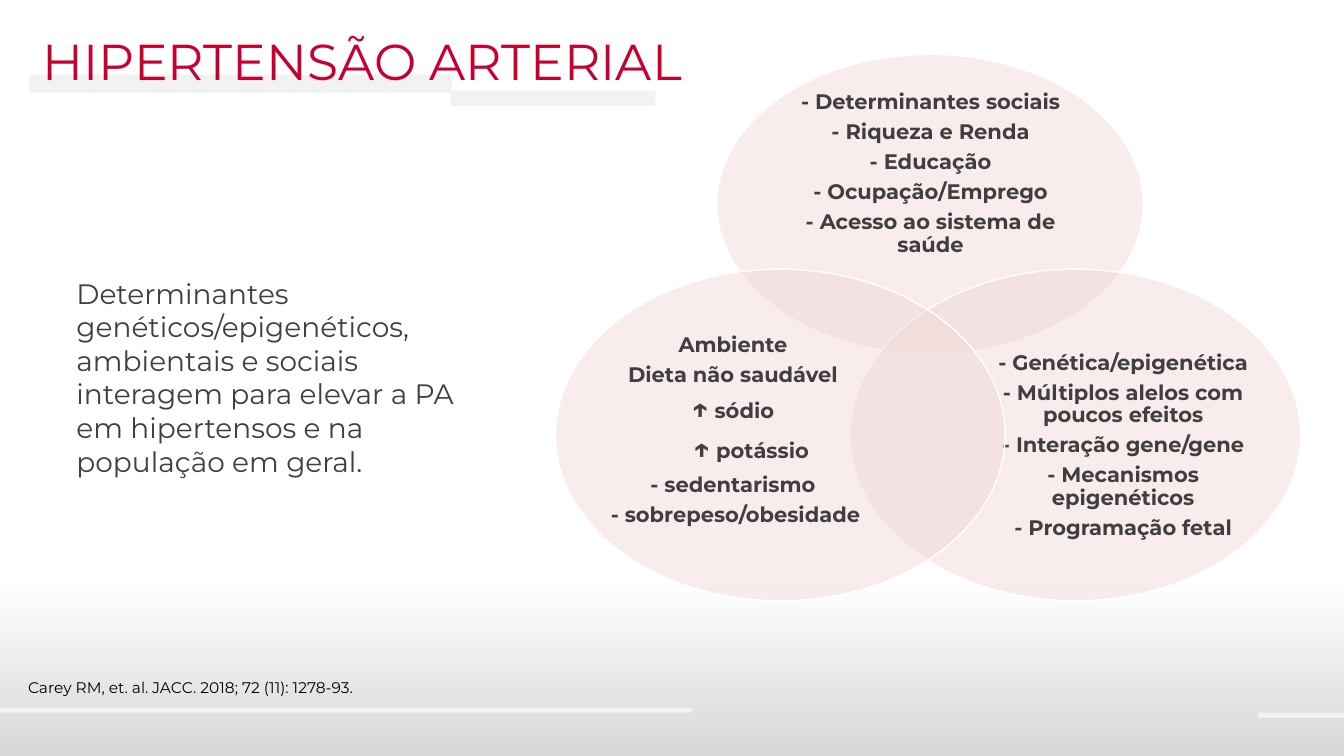
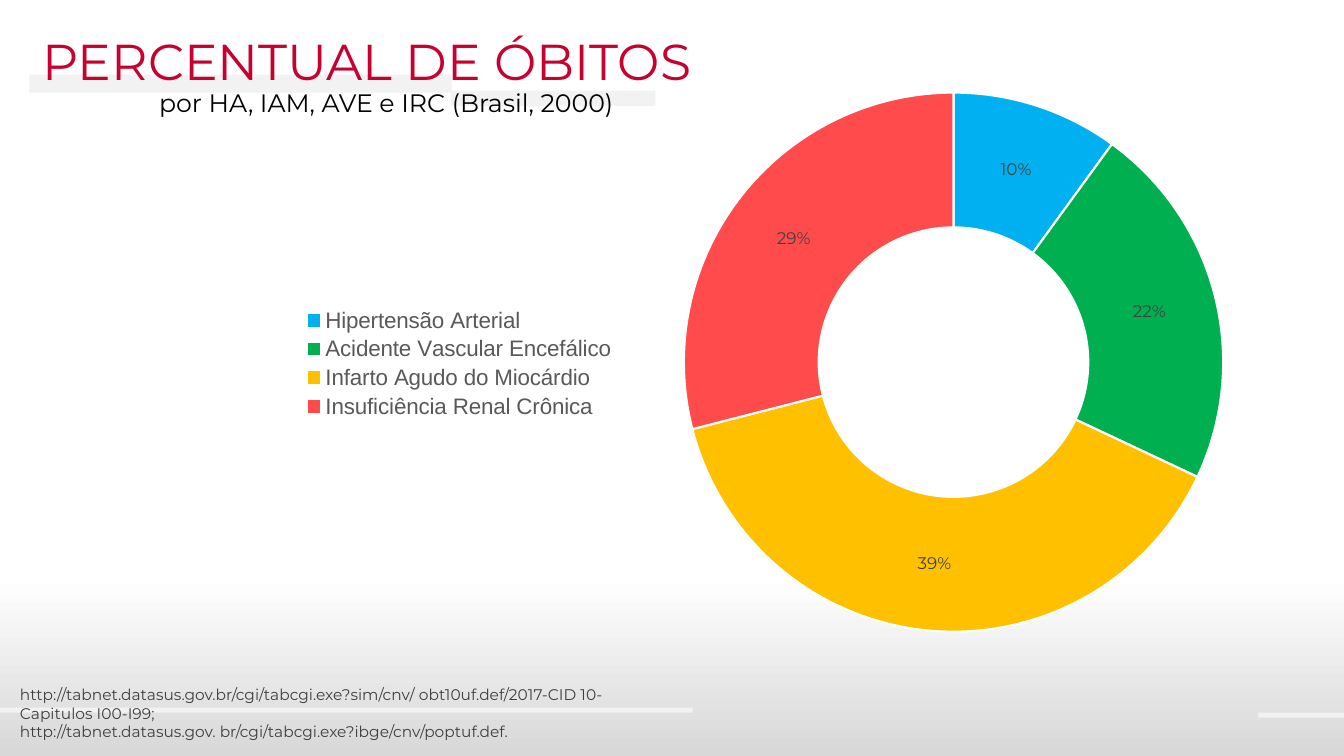
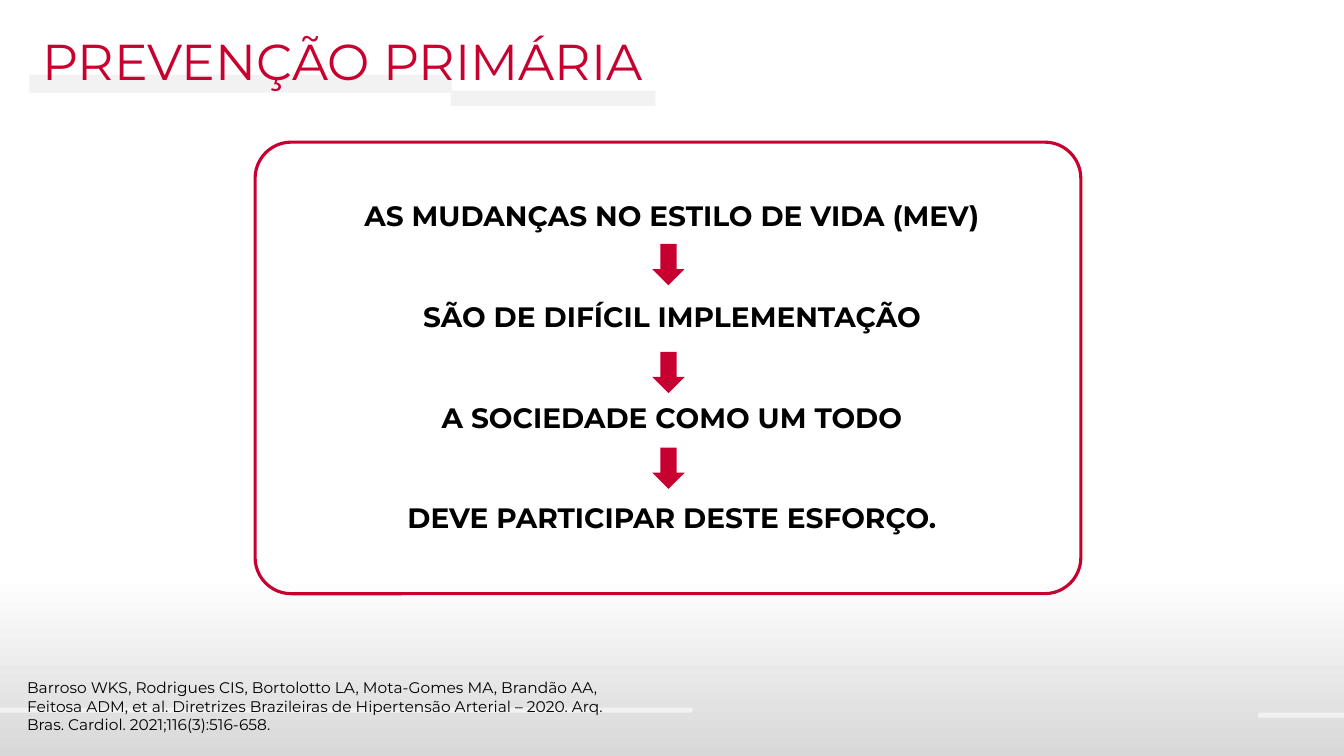
"""Build three slides on arterial hypertension: determinants, deaths and primary prevention."""
from lxml import etree
from pptx import Presentation
from pptx import util as u
from pptx.chart import data as chart_data
from pptx.dml import color as dml
from pptx.enum import chart as chart_enum
from pptx.enum import shapes, text
from pptx.oxml import ns, parse_xml

WIDTH, HEIGHT = 13.33, 7.5
FONT = "Montserrat"
RED, BLACK, GRAY, BAND, PINK, WHITE = "C80030", "000000", "3F3F3F", "F2F2F2", "F2DADA", "FFFFFF"

BANDS = [
    (0.29, 0.74, 4.19, 0.18),
    (4.47, 0.9, 2.03, 0.15),
    (-0.02, 7.02, 6.89, 0.05),
    (12.48, 7.07, 0.85, 0.05),
]

MESSAGE = ("Determinantes genéticos/epigenéticos, ambientais e sociais interagem "
           "para elevar a PA em hipertensos e na população em geral.")
VENN = [
    ((7.11, 0.54, 4.23, 2.97), (7.68, 1.06, 3.1, 1.34), [
        "- Determinantes sociais", "- Riqueza e Renda", "- Educação",
        "- Ocupação/Emprego", "- Acesso ao sistema de saúde"]),
    ((8.43, 2.67, 4.47, 3.29), (9.8, 3.52, 2.68, 1.81), [
        "- Genética/epigenética", "- Múltiplos alelos com poucos efeitos",
        "- Interação gene/gene", "- Mecanismos epigenéticos", "- Programação fetal"]),
    ((5.51, 2.67, 4.46, 3.29), (5.93, 3.52, 2.68, 1.51), [
        "Ambiente", "Dieta não saudável",
        {"runs": [("↑", 20), (" sódio", 15)]},
        {"runs": [("↑", 20), (" potássio", 15)], "before": 7, "indent": 0.36},
        {"runs": [("- sedentarismo", 15)], "before": 7},
        {"runs": [("- sobrepeso/obesidade", 15)], "indent": 0.05}]),
]

DEATHS = [
    ("Hipertensão Arterial", 0.10, "00B0F0"),
    ("Acidente Vascular Encefálico", 0.22, "00B050"),
    ("Infarto Agudo do Miocárdio", 0.39, "FFC000"),
    ("Insuficiência Renal Crônica", 0.29, "FF4B4B"),
]
PLOT = {"x": 0.331, "y": 0.047, "w": 0.601, "h": 0.902}

STEPS = [
    "AS MUDANÇAS NO ESTILO DE VIDA (MEV)",
    "SÃO DE DIFÍCIL IMPLEMENTAÇÃO",
    "A SOCIEDADE COMO UM TODO",
    "DEVE PARTICIPAR DESTE ESFORÇO.",
]
ARROW_TOPS = [2.42, 3.49, 4.44]

CAREY = "Carey RM, et. al. JACC. 2018; 72 (11): 1278-93."
DATASUS = [
    "http://tabnet.datasus.gov.br/cgi/tabcgi.exe?sim/cnv/ obt10uf.def/2017-CID 10-Capitulos I00-I99;",
    "http://tabnet.datasus.gov. br/cgi/tabcgi.exe?ibge/cnv/poptuf.def.",
]
BARROSO = ("Barroso WKS, Rodrigues CIS, Bortolotto LA, Mota-Gomes MA, Brandão AA, "
           "Feitosa ADM, et al. Diretrizes Brazileiras de Hipertensão Arterial – 2020. "
           "Arq. Bras. Cardiol. 2021;116(3):516-658.")


def rgb(value):
    return dml.RGBColor.from_string(value)


def inches(box):
    return [u.Inches(length) for length in box]


def set_font(font, size, color, name=FONT, bold=False):
    font.size, font.name, font.bold = u.Pt(size), name, bold
    font.color.rgb = rgb(color)


def add_text(slide, box, content, size=11, color=BLACK, bold=False, center=False,
             middle=False, margins=(0.1, 0.05), spacing=None, before=0):
    frame = slide.shapes.add_textbox(*inches(box)).text_frame
    frame.word_wrap = True
    frame.margin_left = frame.margin_right = u.Inches(margins[0])
    frame.margin_top = frame.margin_bottom = u.Inches(margins[1])
    frame.vertical_anchor = text.MSO_ANCHOR.MIDDLE if middle else text.MSO_ANCHOR.TOP
    for index, item in enumerate([content] if isinstance(content, str) else content):
        entry = {"runs": [(item, size)]} if isinstance(item, str) else item
        paragraph = frame.add_paragraph() if index else frame.paragraphs[0]
        paragraph.alignment = text.PP_ALIGN.CENTER if center else text.PP_ALIGN.LEFT
        if spacing:
            paragraph.line_spacing = spacing
        if index:
            paragraph.space_before = u.Pt(entry.get("before", before))
        if "indent" in entry:
            paragraph._p.get_or_add_pPr().set("marL", str(u.Inches(entry["indent"])))
        for words, run_size in entry["runs"]:
            run = paragraph.add_run()
            run.text = words
            set_font(run.font, run_size, color, bold=bold)


def add_shape(slide, kind, box, fill=None, line=None, line_width=1, opacity=None):
    shape = slide.shapes.add_shape(kind, *inches(box))
    shape.shadow.inherit = False
    if fill:
        shape.fill.solid()
        shape.fill.fore_color.rgb = rgb(fill)
    else:
        shape.fill.background()
    if opacity:
        tint = shape.fill._xPr.find(".//" + ns.qn("a:srgbClr"))
        etree.SubElement(tint, ns.qn("a:alpha")).set("val", str(opacity * 1000))
    if line:
        shape.line.color.rgb = rgb(line)
        shape.line.width = u.Pt(line_width)
    else:
        shape.line.fill.background()
    return shape


def decorate_layout(layout, slide):
    rectangle = shapes.MSO_SHAPE.RECTANGLE
    backdrop = add_shape(slide, rectangle, (0, 0, WIDTH, HEIGHT))
    backdrop.fill.gradient()
    backdrop.fill.gradient_angle = 270
    for stop, position, color in zip(backdrop.fill.gradient_stops, (0.76, 1), (WHITE, "D8D8D8")):
        stop.position = position
        stop.color.rgb = rgb(color)
    bands = [add_shape(slide, rectangle, box, fill=BAND) for box in BANDS]
    for shape in [backdrop, *bands]:
        layout.shapes.element.append(shape.element)


def add_title(slide, title):
    add_text(slide, (0.32, 0.25, 10.4, 0.71), title, size=36, color=RED)


def build_determinants(slide):
    add_title(slide, "HIPERTENSÃO ARTERIAL")
    add_text(slide, (0.66, 2.69, 4.47, 2.12), MESSAGE, size=20, color=GRAY)
    add_text(slide, (0.18, 6.68, 4.54, 0.29), CAREY)
    for circle, box, items in VENN:
        add_shape(slide, shapes.MSO_SHAPE.OVAL, circle, fill=PINK, line=WHITE, opacity=50)
        add_text(slide, box, items, size=15, color=GRAY, bold=True, center=True,
                 middle=True, margins=(0, 0), spacing=0.9, before=5.2)


def build_deaths(slide):
    add_title(slide, "PERCENTUAL DE ÓBITOS")
    add_text(slide, (0.1, 6.75, 6.63, 0.66), DATASUS, color=GRAY)
    add_text(slide, (1.48, 0.82, 7.86, 0.4), "por HA, IAM, AVE e IRC (Brasil, 2000)", size=18)
    names, values, colors = zip(*DEATHS)
    data = chart_data.CategoryChartData(number_format="0%")
    data.categories = names
    data.add_series("Series 1", values)
    chart = slide.shapes.add_chart(chart_enum.XL_CHART_TYPE.DOUGHNUT,
                                   *inches((2.89, 0.64, 10.4, 5.93)), data).chart
    chart.has_title = False
    set_font(chart.font, 10, BLACK, name="Arial")
    chart.has_legend = True
    chart.legend.position = chart_enum.XL_LEGEND_POSITION.LEFT
    chart.legend.include_in_layout = False
    set_font(chart.legend.font, 16, "595959", name="Arial")
    plot = chart.plots[0]
    plot.vary_by_categories = True
    plot._element.find(ns.qn("c:holeSize")).set("val", "55")
    for index, color in enumerate(colors):
        area = plot.series[0].points[index].format
        area.fill.solid()
        area.fill.fore_color.rgb = rgb(color)
        area.line.color.rgb = rgb(WHITE)
        area.line.width = u.Pt(1.5)
    labels = plot.series[0].data_labels
    labels.show_value = True
    labels.show_percentage = False
    labels.number_format, labels.number_format_is_linked = "0%", False
    set_font(labels.font, 12, "404040")
    modes = "".join(f'<c:{axis}Mode val="edge"/>' for axis in "xy")
    shares = "".join(f'<c:{key} val="{share}"/>' for key, share in PLOT.items())
    layout = parse_xml(f'<c:layout {ns.nsdecls("c")}><c:manualLayout>'
                       f'<c:layoutTarget val="inner"/>{modes}{shares}'
                       '</c:manualLayout></c:layout>')
    plot_area = chart._chartSpace.find(".//" + ns.qn("c:plotArea"))
    for previous in plot_area.findall(ns.qn("c:layout")):
        plot_area.remove(previous)
    plot_area.insert(0, layout)


def build_prevention(slide):
    add_title(slide, "PREVENÇÃO PRIMÁRIA")
    frame = add_shape(slide, shapes.MSO_SHAPE.ROUNDED_RECTANGLE, (2.53, 1.41, 8.19, 4.48),
                      line=RED, line_width=2.25)
    frame.adjustments[0] = 0.08
    add_text(slide, (2.93, 1.92, 7.47, 3.47), STEPS, size=20, bold=True, center=True, before=48)
    for top in ARROW_TOPS:
        add_shape(slide, shapes.MSO_SHAPE.DOWN_ARROW, (6.47, top, 0.32, 0.41), fill=RED)
    add_text(slide, (0.17, 6.68, 6.05, 0.66), BARROSO)


def main():
    presentation = Presentation()
    presentation.slide_width, presentation.slide_height = inches((WIDTH, HEIGHT))
    blank = presentation.slide_layouts[6]
    builders = [build_determinants, build_deaths, build_prevention]
    slides = [presentation.slides.add_slide(blank) for _ in builders]
    decorate_layout(blank, slides[0])
    for build, slide in zip(builders, slides):
        build(slide)
    presentation.save("out.pptx")


if __name__ == "__main__":
    main()
